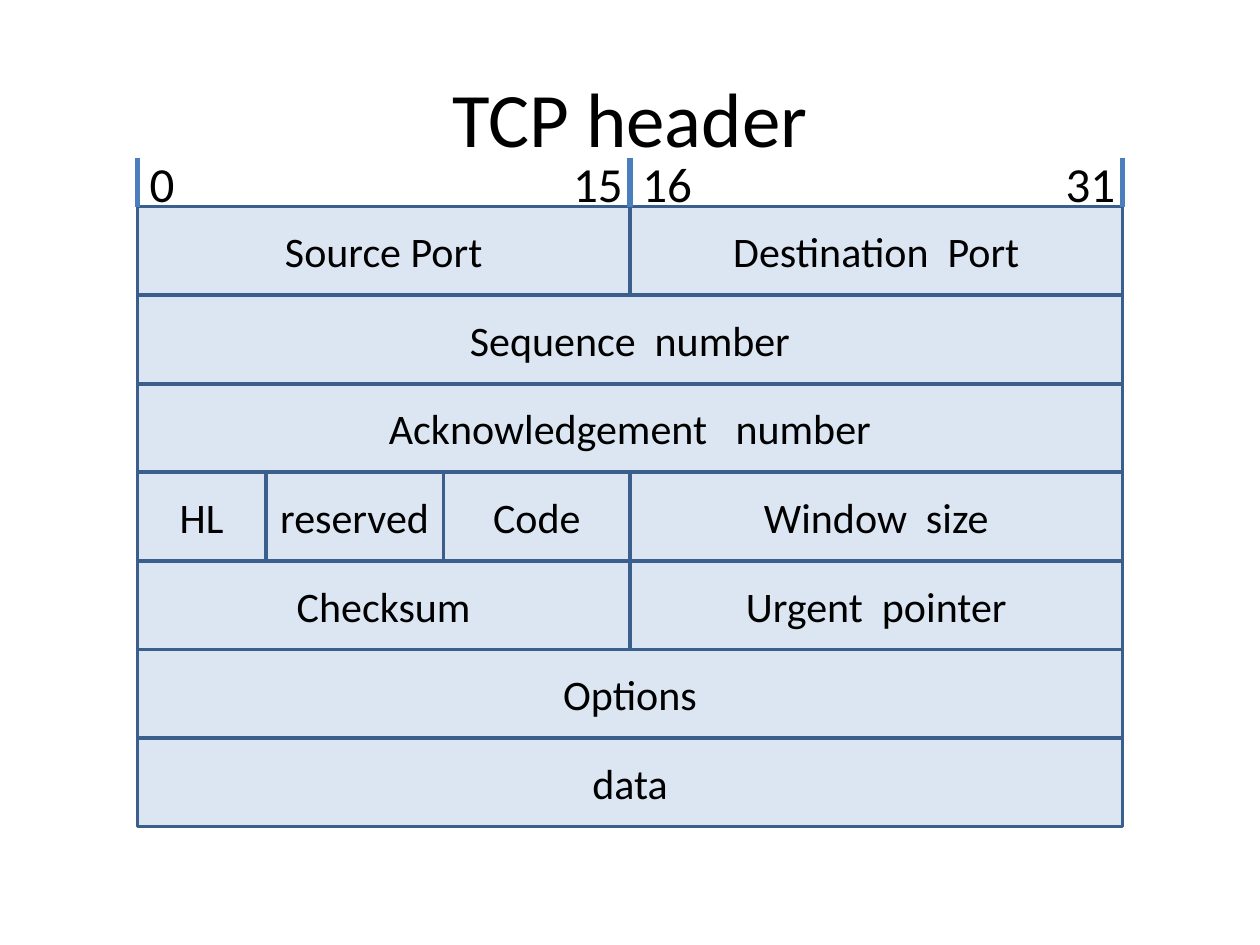
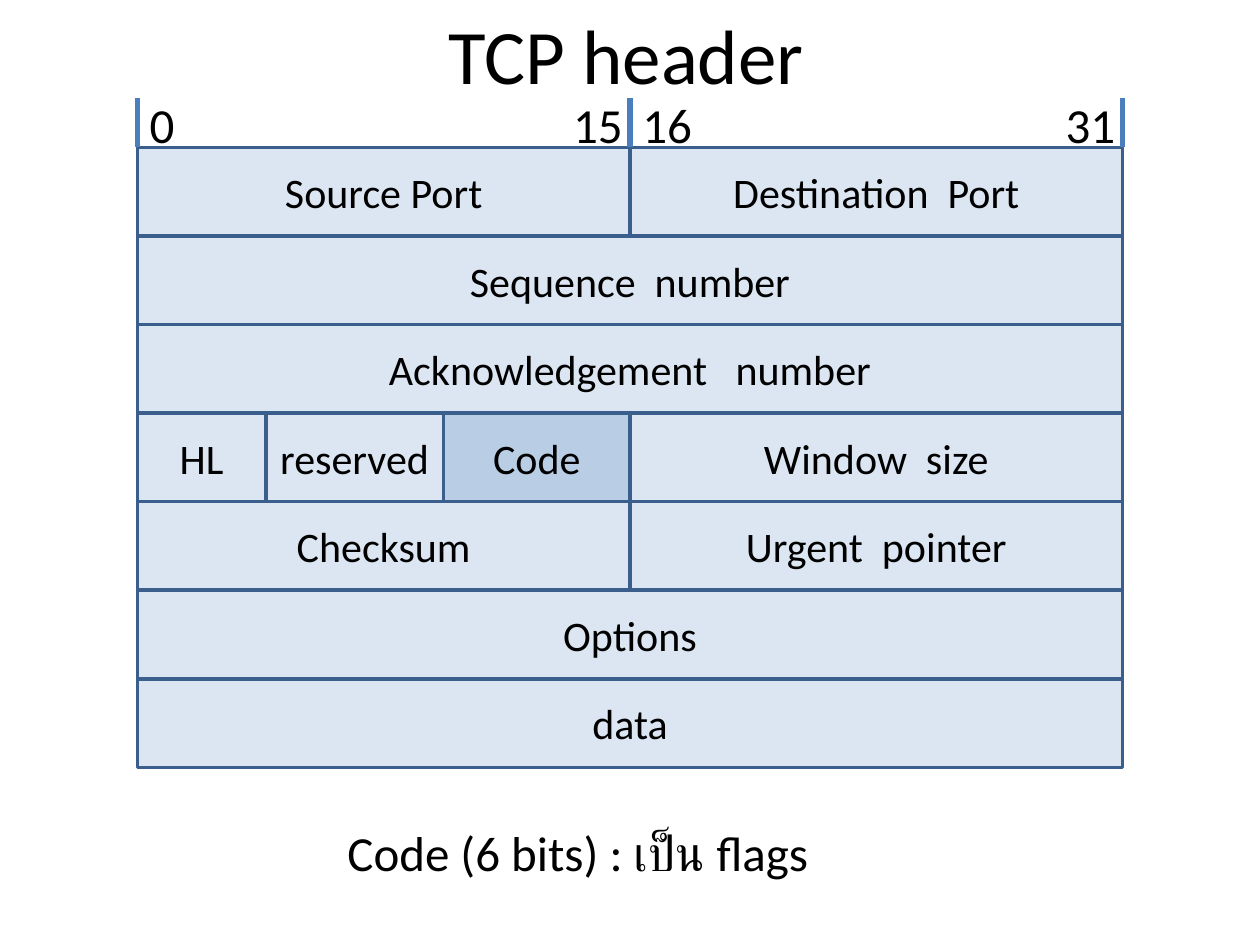
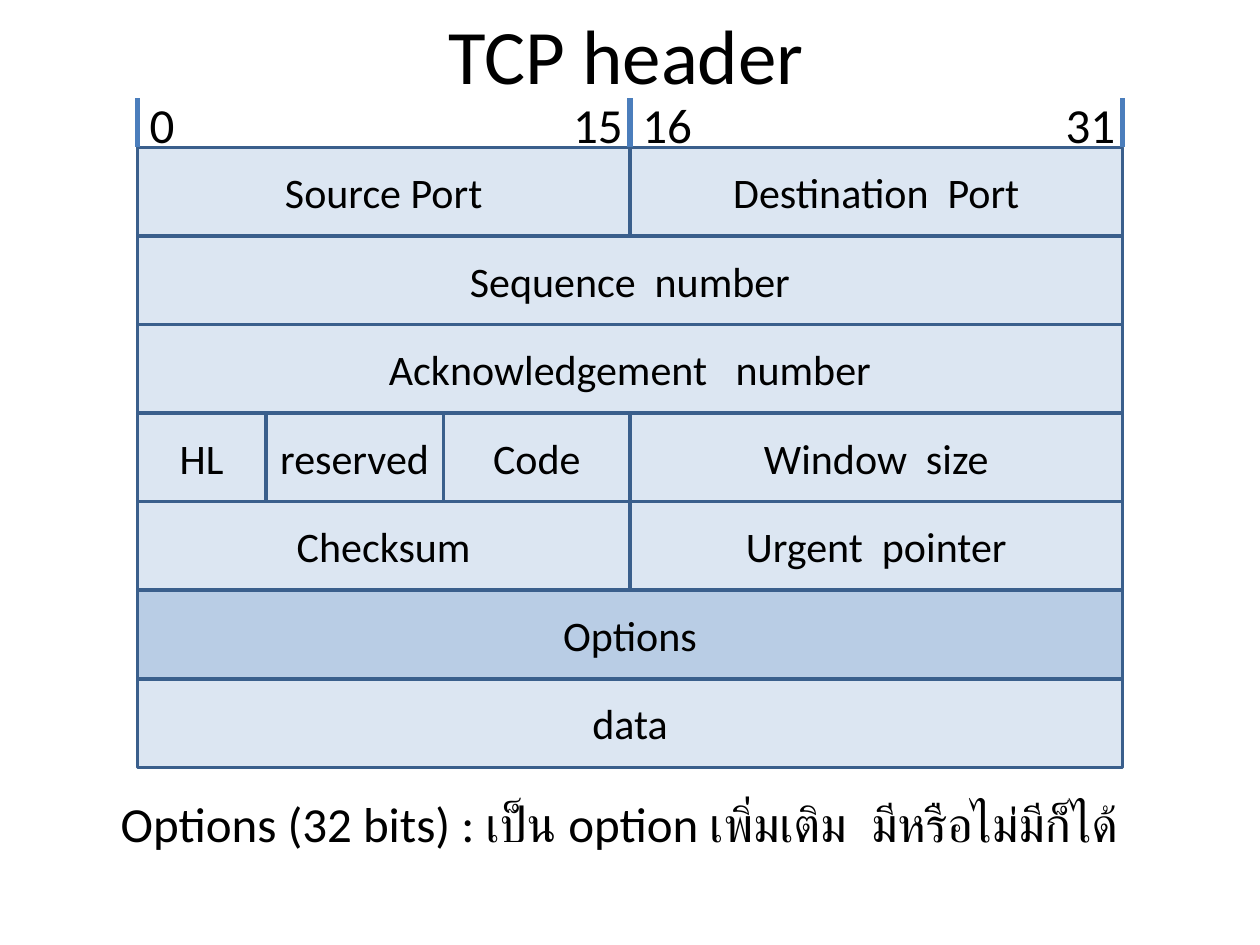
from pptx import Presentation
from pptx import util as u
from pptx.dml.color import RGBColor
from pptx.enum import shapes, text
from pptx.oxml.ns import qn
from lxml import etree

FONT = "Calibri"
COLORS = {"text": "000000", "field": "DCE6F2", "marked": "B9CDE5",
          "border": "3A5F8C", "tick": "4B7EBC"}
TITLE = "TCP header"
WIDTH, HEIGHT, LEFT = 7.82, 4.92, 1.09
HALF = WIDTH / 2
ROWS = [
    [("Source Port", HALF), ("Destination  Port", HALF)],
    [("Sequence  number", WIDTH)],
    [("Acknowledgement   number", WIDTH)],
    [("HL", 1.02), ("reserved", 1.41), ("Code", 1.48), ("Window  size", HALF)],
    [("Checksum", HALF), ("Urgent  pointer", HALF)],
    [("Options", WIDTH)],
    [("data", WIDTH)],
]
BIT_LABELS = [("0", 0, 0.4), ("15", HALF - 0.55, 0.6),
              ("16", HALF, 0.6), ("31", WIDTH - 0.55, 0.6)]


def rgb(name):
    """Return a palette colour."""
    return RGBColor.from_string(COLORS[name])


def inches(*lengths):
    """Convert numbers to lengths in inches."""
    return [u.Inches(n) for n in lengths]


def write(tf, words, size, align=text.PP_ALIGN.LEFT):
    """Write one styled run into a text frame."""
    p = tf.paragraphs[0]
    p.alignment = align
    r = p.add_run()
    r.text = words
    r.font.name, r.font.size = FONT, u.Pt(size)
    r.font.color.rgb = rgb("text")


def add_title(s, box):
    """Add the centred slide title."""
    tf = s.shapes.add_textbox(*inches(*box)).text_frame
    tf.word_wrap = True
    tf.vertical_anchor = text.MSO_ANCHOR.MIDDLE
    write(tf, TITLE, 44, text.PP_ALIGN.CENTER)


def add_label(s, words, box, wrap):
    """Add a left-aligned label that grows with its text."""
    tf = s.shapes.add_textbox(*inches(*box)).text_frame
    tf.word_wrap = wrap
    tf.auto_size = text.MSO_AUTO_SIZE.SHAPE_TO_FIT_TEXT
    write(tf, words, 28)


def add_field(s, words, box, fill):
    """Add one header field."""
    sp = s.shapes.add_shape(shapes.MSO_SHAPE.RECTANGLE, *inches(*box))
    sp.shadow.inherit = False
    sp.fill.solid()
    sp.fill.fore_color.rgb = rgb(fill)
    sp.line.color.rgb, sp.line.width = rgb("border"), u.Pt(2)
    tf = sp.text_frame
    tf.word_wrap = True
    tf.vertical_anchor = text.MSO_ANCHOR.MIDDLE
    write(tf, words, 24, text.PP_ALIGN.CENTER)


def add_fields(s, left, top, marked):
    """Stack the rows of header fields."""
    row_height = HEIGHT / len(ROWS)
    for i, row in enumerate(ROWS):
        x = left
        for words, width in row:
            fill = "marked" if words == marked else "field"
            add_field(s, words, (x, top + i * row_height, width, row_height), fill)
            x += width


def add_bit_ruler(s, left, top):
    """Add the ticks and bit numbers above the fields."""
    for dx in (0, HALF, WIDTH):
        line = s.shapes.add_connector(shapes.MSO_CONNECTOR.STRAIGHT,
                                      *inches(left + dx, top - 0.39, left + dx, top))
        line.line.color.rgb, line.line.width = rgb("tick"), u.Pt(3)
        etree.SubElement(line._element.spPr, qn("a:effectLst"))
    for words, dx, width in BIT_LABELS:
        add_label(s, words, (left + dx, top - 0.47, width, 0.57), False)


def add_header_slide(prs, title_box, top, marked=None, note=None, note_box=None):
    """Add a slide with the header diagram and an optional note."""
    s = prs.slides.add_slide(prs.slide_layouts[6])
    add_title(s, title_box)
    add_fields(s, LEFT, top, marked)
    add_bit_ruler(s, LEFT, top)
    if note:
        add_label(s, note, note_box, True)


def main():
    """Build and save the presentation."""
    prs = Presentation()
    prs.slide_width, prs.slide_height = inches(10, 7.5)
    high_title = (0.47, 0, 9, 0.86)
    add_header_slide(prs, (0.5, 0.3, 9, 1.25), 1.64)
    add_header_slide(prs, high_title, 1.17, "Code",
                     "Code (6 bits) : เป็น flags", (2.66, 6.48, 5.63, 0.57))
    add_header_slide(prs, high_title, 1.17, "Options",
                     "Options (32 bits) : เป็น option เพิ่มเติม  มีหรือไม่มีก็ได้",
                     (0.86, 6.25, 8.36, 0.57))
    prs.save("out.pptx")


if __name__ == "__main__":
    main()
